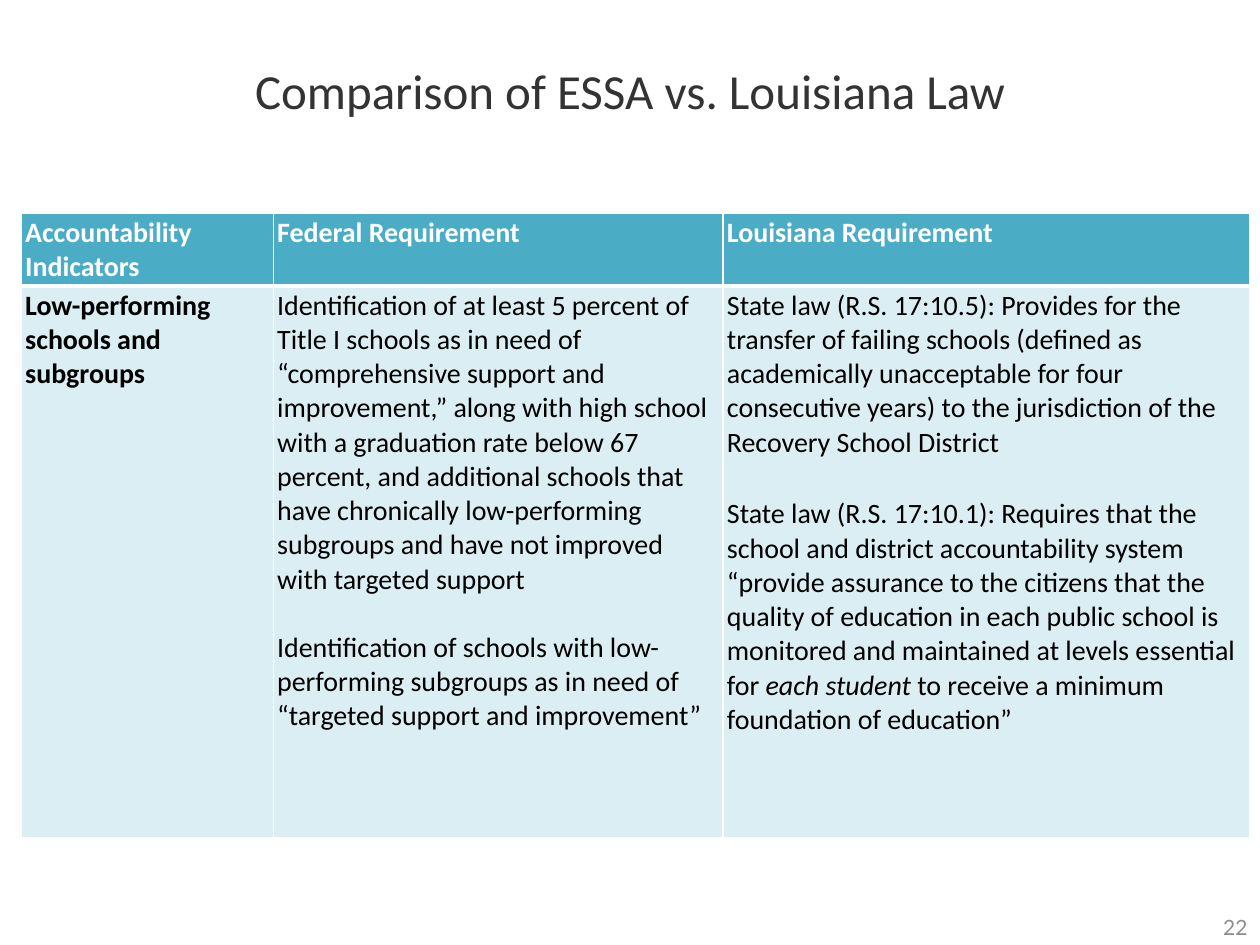
"""Build the slide comparing ESSA with Louisiana law on school accountability."""
from dataclasses import dataclass

from lxml import etree
from pptx import Presentation
from pptx.dml.color import RGBColor
from pptx.enum.text import MSO_ANCHOR, PP_ALIGN
from pptx.oxml.ns import qn
from pptx.util import Inches, Pt

MIDDLE, CENTER, RIGHT = MSO_ANCHOR.MIDDLE, PP_ALIGN.CENTER, PP_ALIGN.RIGHT
TITLE_ONLY = 5


@dataclass(frozen=True)
class Theme:
    font: str = "Calibri"
    number_font: str = "Lato"
    title_size: int = 28
    table_size: int = 16
    number_size: int = 12
    title: str = "333333"
    number: str = "8C8C8C"
    white: str = "FFFFFF"
    black: str = "000000"
    header_fill: str = "4BACC6"
    body_fill: str = "DBEEF4"


THEME = Theme()
TITLE = "Comparison of ESSA vs. Louisiana Law"
PAGE_NUMBER = "22"
HEADERS = ["Accountability Indicators", "Federal Requirement", "Louisiana Requirement"]
INDICATOR = [["Low-performing schools and subgroups"]]
FEDERAL = [
    ["Identification of at least 5 percent of Title I schools as in need of “comprehensive "
     "support and improvement,” along with high school with a graduation rate below 67 percent, "
     "and additional schools that have chronically low-performing subgroups and have not "
     "improved with targeted support"],
    ["Identification of schools with low-performing subgroups as in need of “targeted support "
     "and improvement”"],
]
EMPHASIS = "each student "
LOUISIANA = [
    ["State law (R.S. 17:10.5): Provides for the transfer of failing schools (defined as "
     "academically unacceptable for four consecutive years) to the jurisdiction of the Recovery "
     "School District"],
    ["State law (R.S. 17:10.1): Requires that the school and district accountability system "
     "“provide assurance to the citizens that the quality of education in each public school is "
     "monitored and maintained at levels essential for ", EMPHASIS,
     "to receive a minimum foundation of education”"],
]
ROWS = [[[[header]] for header in HEADERS], [INDICATOR, FEDERAL, LOUISIANA]]
COLUMN_WIDTHS = [2, 3.57, 4.18]
ROW_HEIGHTS = [0.58, 4.38]
PARAGRAPH_GAPS = [0, 19.5, 21.5]
TABLE_LEFT, TABLE_TOP = 0.17, 1.69
THIN, THICK = 1, 3


def style(paragraph, font, size, color, bold=False):
    paragraph.font.name = font
    paragraph.font.size = Pt(size)
    paragraph.font.bold = bold
    paragraph.font.color.rgb = RGBColor.from_string(color)


def add_border(cell, side, width):
    properties = cell._tc.get_or_add_tcPr()
    line = etree.SubElement(properties, qn(f"a:ln{side}"), w=str(Pt(width)))
    fill = etree.SubElement(line, qn("a:solidFill"))
    etree.SubElement(fill, qn("a:srgbClr"), val=THEME.white)


def fill_cell(cell, paragraphs, gap, is_header, bold):
    cell.margin_left = cell.margin_right = Inches(0.03)
    cell.margin_top = cell.margin_bottom = Inches(0.02)
    widths = {"L": THIN, "R": THIN, "T": THIN if is_header else THICK,
              "B": THICK if is_header else THIN}
    for side, width in widths.items():
        add_border(cell, side, width)
    cell.fill.solid()
    cell.fill.fore_color.rgb = RGBColor.from_string(
        THEME.header_fill if is_header else THEME.body_fill)
    frame = cell.text_frame
    for index, spans in enumerate(paragraphs):
        paragraph = frame.add_paragraph() if index else frame.paragraphs[0]
        if index:
            paragraph.space_before = Pt(gap)
        for text in spans:
            span = paragraph.add_run()
            span.text = text
            if text == EMPHASIS:
                span.font.italic = True
        style(paragraph, THEME.font, THEME.table_size,
              THEME.white if is_header else THEME.black, bold)


def add_title(slide):
    title = slide.shapes.title
    title.left, title.top = 0, 0
    title.width, title.height = Inches(10), Inches(1.42)
    title.text_frame.text = TITLE
    title.text_frame.vertical_anchor = MIDDLE
    paragraph = title.text_frame.paragraphs[0]
    paragraph.alignment = CENTER
    style(paragraph, THEME.font, THEME.title_size, THEME.title)


def add_comparison(slide):
    table = slide.shapes.add_table(
        len(ROWS), len(HEADERS), Inches(TABLE_LEFT), Inches(TABLE_TOP),
        Inches(sum(COLUMN_WIDTHS)), Inches(sum(ROW_HEIGHTS))).table
    table.horz_banding = False
    for column, width in zip(table.columns, COLUMN_WIDTHS):
        column.width = Inches(width)
    for row, height in zip(table.rows, ROW_HEIGHTS):
        row.height = Inches(height)
    for r, row in enumerate(ROWS):
        for c, paragraphs in enumerate(row):
            fill_cell(table.cell(r, c), paragraphs, PARAGRAPH_GAPS[c], r == 0, r == 0 or c == 0)


def add_page_number(slide):
    box = slide.shapes.add_textbox(Inches(7.67), Inches(7.17), Inches(2.33), Inches(0.37))
    frame = box.text_frame
    frame.word_wrap = True
    frame.vertical_anchor = MIDDLE
    frame.text = PAGE_NUMBER
    frame.paragraphs[0].alignment = RIGHT
    style(frame.paragraphs[0], THEME.number_font, THEME.number_size, THEME.number)


def main():
    deck = Presentation()
    deck.slide_width, deck.slide_height = Inches(10), Inches(7.5)
    slide = deck.slides.add_slide(deck.slide_layouts[TITLE_ONLY])
    add_title(slide)
    add_page_number(slide)
    add_comparison(slide)
    deck.save("out.pptx")


if __name__ == "__main__":
    main()
